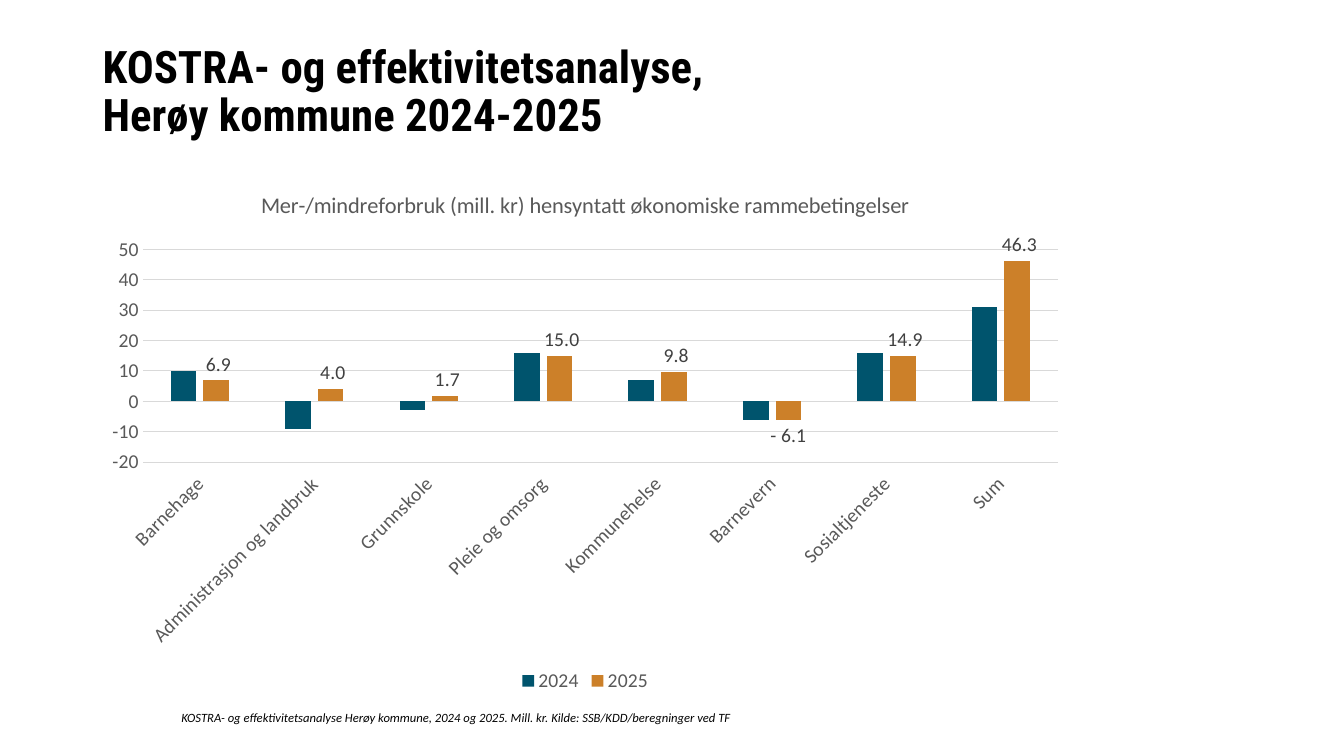
from lxml import etree
from pptx import Presentation
from pptx import util as u
from pptx.chart.data import CategoryChartData
from pptx.dml.color import RGBColor
from pptx.enum import chart as ch, text

BLACK = RGBColor(0, 0, 0)
GREY = RGBColor(0x59, 0x59, 0x59)
DARK = RGBColor(0x40, 0x40, 0x40)
RULE = RGBColor(0xD9, 0xD9, 0xD9)
TEAL = RGBColor(0x00, 0x54, 0x6D)
OCHRE = RGBColor(0xCC, 0x80, 0x29)

WIDE, HIGH = u.Inches(13.33), u.Inches(7.5)
LEFT = 0.069  # shared left edge of title and chart

AREAS = ["Barnehage", "Administrasjon og landbruk", "Grunnskole",
         "Pleie og omsorg", "Kommunehelse", "Barnevern",
         "Sosialtjeneste", "Sum"]
YEARS = [("2024", TEAL, [10, -9, -3, 16, 7, -6, 16, 31]),
         ("2025", OCHRE, [6.9, 4, 1.7, 15, 9.8, -6.1, 14.9, 46.3])]


def place(x, y, w, h):
    """Turn shares of the slide into lengths."""
    return [round(n) for n in (x * WIDE, y * HIGH, w * WIDE, h * HIGH)]


def style(font, size, color, name="Calibri", bold=False, italic=False):
    font.size, font.name = u.Pt(size), name
    font.bold, font.italic = bold, italic
    font.color.rgb = color


def add_text(slide, box, words, anchor=text.MSO_ANCHOR.TOP, **look):
    frame = slide.shapes.add_textbox(*place(*box)).text_frame
    frame.word_wrap = True
    frame.vertical_anchor = anchor
    para = frame.paragraphs[0]
    para.text = words
    style(para.font, **look)
    return para


def style_axis(axis):
    axis.major_tick_mark = axis.minor_tick_mark = ch.XL_TICK_MARK.NONE
    style(axis.tick_labels.font, 14, GREY)


def add_columns(slide, box, title):
    data = CategoryChartData()
    data.categories = AREAS
    for year, _, sums in YEARS:
        data.add_series(year, sums)
    chart = slide.shapes.add_chart(
        ch.XL_CHART_TYPE.COLUMN_CLUSTERED, *place(*box), data).chart
    style(chart.font, 14, BLACK)

    # Heading and legend
    chart.has_title = True
    head = chart.chart_title.text_frame.paragraphs[0]
    head.text = title
    style(head.font, 16, GREY)
    chart.chart_title.include_in_layout = False
    chart.has_legend = True
    chart.legend.position = ch.XL_LEGEND_POSITION.BOTTOM
    chart.legend.include_in_layout = False
    style(chart.legend.font, 14, GREY)

    # Axes
    cat, val = chart.category_axis, chart.value_axis
    style_axis(cat)
    style_axis(val)
    cat.tick_label_position = ch.XL_TICK_LABEL_POSITION.LOW
    val.tick_labels.number_format = "#,##0"
    val.tick_labels.number_format_is_linked = False
    val.format.line.fill.background()
    for line in (cat.format.line, val.major_gridlines.format.line):
        line.color.rgb, line.width = RULE, u.Pt(0.75)

    # Columns
    plot = chart.plots[0]
    plot.gap_width, plot.overlap = 219, -27
    plot.vary_by_categories = False
    for bars, (_, color, _) in zip(plot.series, YEARS):
        bars.invert_if_negative = False
        bars.format.fill.solid()
        bars.format.fill.fore_color.rgb = color

    # Values above the last year only
    labels = plot.series[-1].data_labels
    labels.show_value = True
    labels.number_format = "#\\ ##0.0"
    labels.number_format_is_linked = False
    labels.position = ch.XL_LABEL_POSITION.OUTSIDE_END
    style(labels.font, 14, DARK)


def main():
    deck = Presentation()
    deck.slide_width, deck.slide_height = WIDE, HIGH
    slide = deck.slides.add_slide(deck.slide_layouts[6])

    # Title
    title = add_text(
        slide, (LEFT, 0.053, 0.863, 0.141),
        "KOSTRA- og effektivitetsanalyse, \vHerøy kommune 2024-2025",
        text.MSO_ANCHOR.BOTTOM, size=32, color=BLACK,
        name="Roboto Condensed", bold=True)
    title.line_spacing = 0.9

    # Chart
    add_columns(slide, (LEFT, 0.225, 0.733, 0.697),
                "Mer-/mindreforbruk (mill. kr) hensyntatt "
                "økonomiske rammebetingelser")

    # Source line
    note = add_text(
        slide, (0.1275, 0.932, 0.596, 0.033),
        "KOSTRA- og effektivitetsanalyse Herøy kommune, 2024 og 2025. "
        "Mill. kr. Kilde: SSB/KDD/beregninger ved TF",
        size=9, color=BLACK, italic=True)
    note.space_after = u.Pt(12)

    deck.save("out.pptx")


if __name__ == "__main__":
    main()
